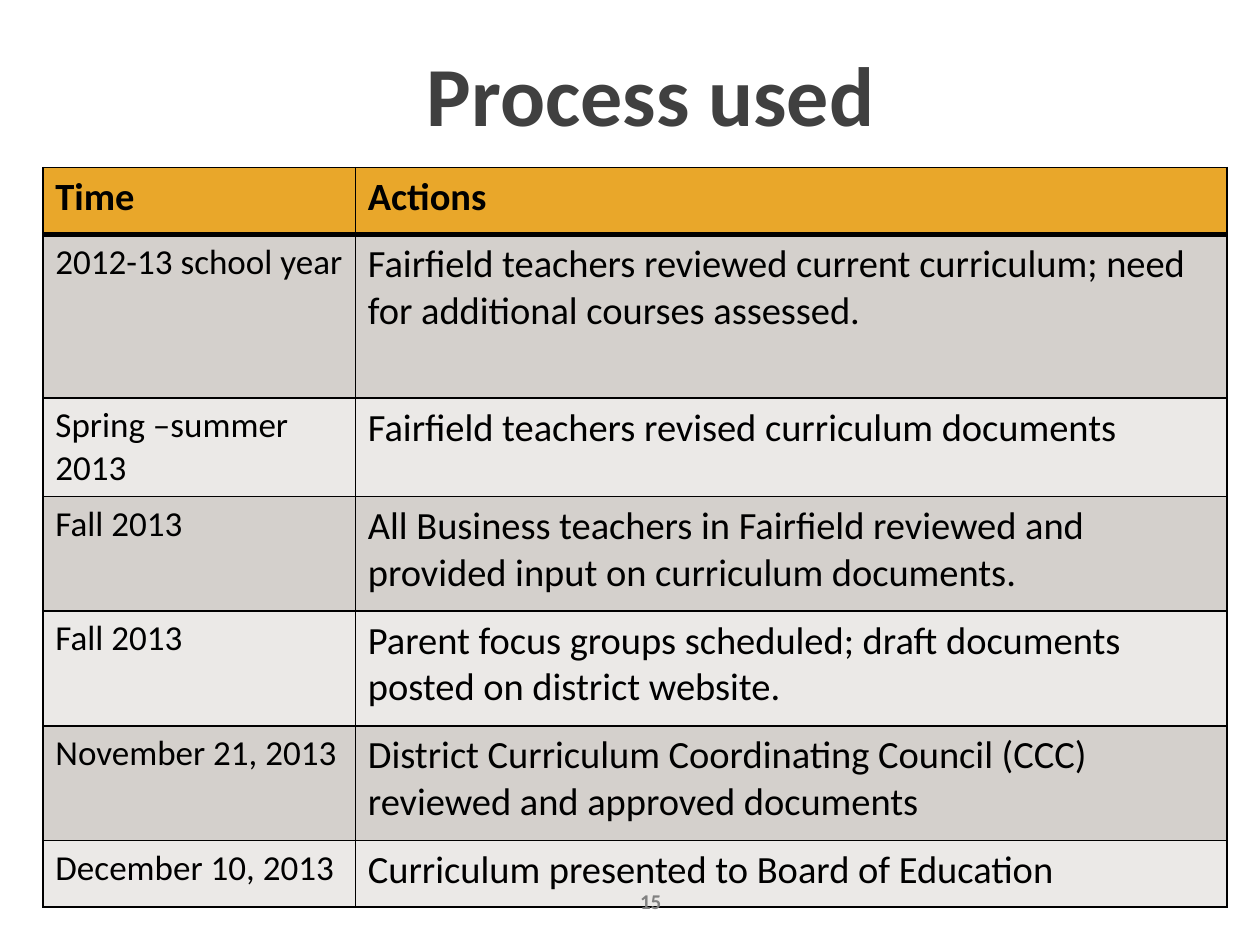
from lxml import etree
from pptx import Presentation
from pptx.dml.color import RGBColor
from pptx.enum.text import MSO_ANCHOR, PP_ALIGN
from pptx.oxml.ns import qn
from pptx.util import Inches, Pt

FONT = "Calibri"
BLACK = "000000"
HEADER_FILL = "E9A72A"
BAND_FILLS = ("D4D0CC", "EBE9E7")

TITLE = "Process used"
PAGE_NUMBER = "15"
HEADER = ("Time", "Actions")
STEPS = [
    ("2012-13 school year",
     "Fairfield teachers reviewed current curriculum; need for additional courses assessed."),
    ("Spring –summer 2013", "Fairfield teachers revised curriculum documents"),
    ("Fall 2013",
     "All Business teachers in Fairfield reviewed and provided input on curriculum documents."),
    ("Fall 2013",
     "Parent focus groups scheduled; draft documents posted on district website."),
    ("November 21, 2013",
     "District Curriculum Coordinating Council (CCC) reviewed and approved documents"),
    ("December 10, 2013", "Curriculum presented to Board of Education"),
]
COLUMN_WIDTHS = (2.48, 6.92)
ROW_HEIGHTS = (0.53, 1.3, 0.53, 0.91, 0.91, 0.91, 0.53)


def rgb(value):
    return RGBColor.from_string(value)


def write(frame, text, size, color=BLACK, bold=False, align=None, line_spacing=None):
    paragraph = frame.paragraphs[0]
    paragraph.alignment = align
    paragraph.line_spacing = line_spacing
    run = paragraph.add_run()
    run.text = text
    run.font.name = FONT
    run.font.size = Pt(size)
    run.font.bold = bold
    run.font.color.rgb = rgb(color)


def set_borders(cell, **widths):
    """Draw black cell borders; widths are points keyed by L, R, T and B."""
    properties = cell._tc.get_or_add_tcPr()
    for index, side in enumerate("LRTB"):
        line = etree.Element(qn(f"a:ln{side}"), w=str(Pt(widths[side])))
        fill = etree.SubElement(line, qn("a:solidFill"))
        etree.SubElement(fill, qn("a:srgbClr"), val=BLACK)
        properties.insert(index, line)


def add_process_table(slide):
    rows = [HEADER, *STEPS]
    frame = slide.shapes.add_table(
        len(rows), len(HEADER), Inches(0.34), Inches(1.33),
        Inches(sum(COLUMN_WIDTHS)), Inches(sum(ROW_HEIGHTS)))
    table = frame.table
    for column, width in zip(table.columns, COLUMN_WIDTHS):
        column.width = Inches(width)
    for row, height in zip(table.rows, ROW_HEIGHTS):
        row.height = Inches(height)

    for r, texts in enumerate(rows):
        is_header = r == 0
        for c, text in enumerate(texts):
            cell = table.cell(r, c)
            size = 20 if c == 0 and not is_header else 22
            write(cell.text_frame, text, size, bold=is_header)
            cell.fill.solid()
            cell.fill.fore_color.rgb = rgb(HEADER_FILL if is_header else BAND_FILLS[(r - 1) % 2])
            set_borders(cell, L=1, R=1, T=3 if r == 1 else 1, B=3 if is_header else 1)


def main():
    presentation = Presentation()
    presentation.slide_width = Inches(10)
    presentation.slide_height = Inches(7.5)
    slide = presentation.slides.add_slide(presentation.slide_layouts[5])

    title = slide.shapes.title
    title.left, title.top = Inches(1.19), Inches(0.05)
    title.width, title.height = Inches(7.95), Inches(1.46)
    title.text_frame.vertical_anchor = MSO_ANCHOR.MIDDLE
    write(title.text_frame, TITLE, 48, color="404040", bold=True,
          align=PP_ALIGN.CENTER, line_spacing=Pt(52))

    add_process_table(slide)

    number = slide.shapes.add_textbox(Inches(4.83), Inches(6.95), Inches(0.67), Inches(0.4))
    number.text_frame.word_wrap = True
    number.text_frame.vertical_anchor = MSO_ANCHOR.MIDDLE
    write(number.text_frame, PAGE_NUMBER, 12, color="808080", bold=True, align=PP_ALIGN.CENTER)

    presentation.save("out.pptx")


if __name__ == "__main__":
    main()
